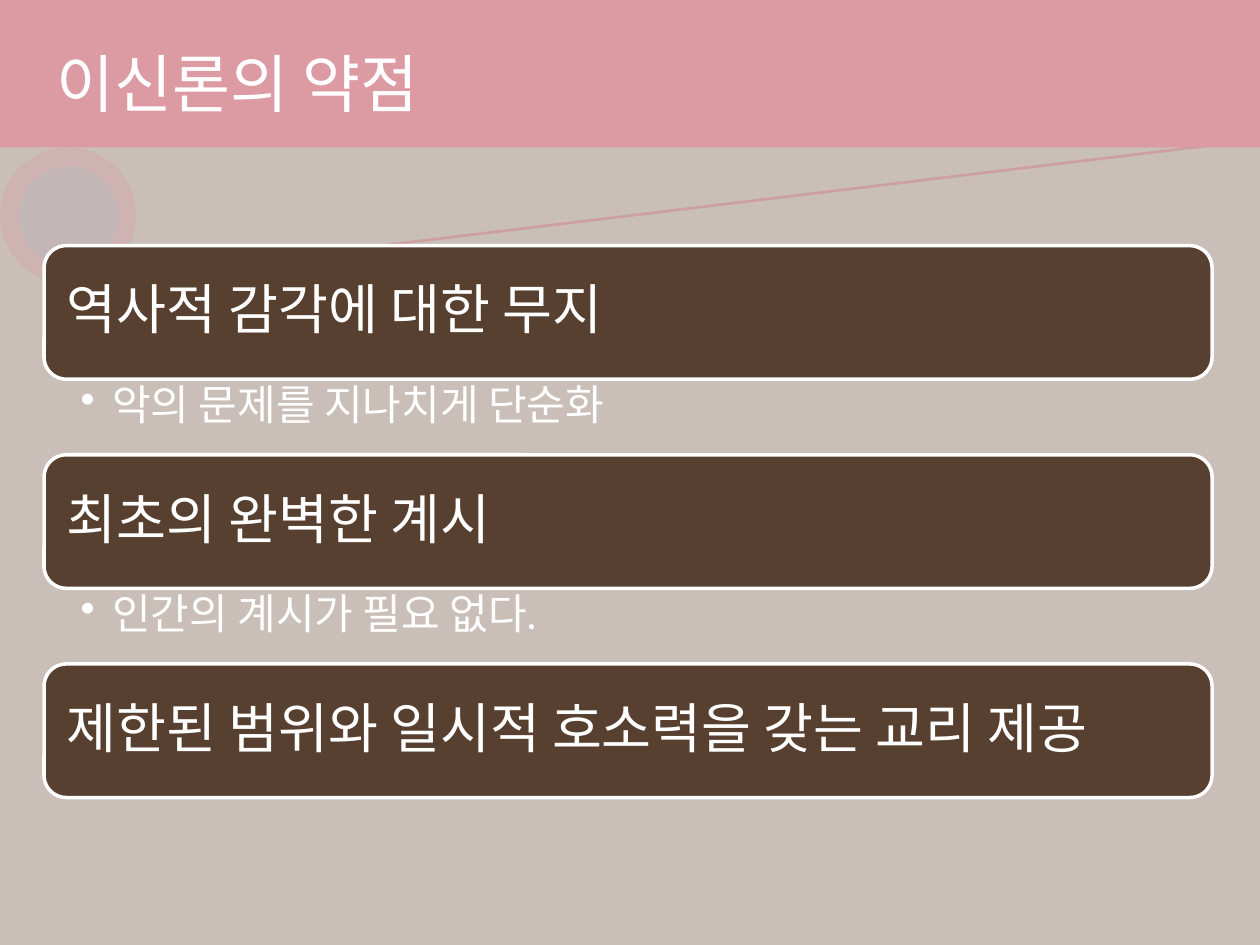
import pptx
import pptx.util
import pptx.dml.color
import pptx.enum.shapes
import pptx.enum.text
import pptx.oxml.ns
from lxml import etree

Inches, Pt = pptx.util.Inches, pptx.util.Pt
Shape = pptx.enum.shapes.MSO_SHAPE
Anchor = pptx.enum.text.MSO_ANCHOR
Align = pptx.enum.text.PP_ALIGN
qn = pptx.oxml.ns.qn

TITLE = "이신론의 약점"
POINTS = [
    ("역사적 감각에 대한 무지", "악의 문제를 지나치게 단순화"),
    ("최초의 완벽한 계시", "인간의 계시가 필요 없다."),
    ("제한된 범위와 일시적 호소력을 갖는 교리 제공", None),
]
RINGS = [(0, 1.17, 1.08, "E88B9D"), (0.15, 1.32, 0.79, "94C7CC")]
WHITE, BROWN, PINK, BEIGE = "FFFFFF", "57402F", "DC9BA3", "C9BEB8"

LEFT, TOP, WIDTH = 0.35, 1.95, 9.27
BAR, NOTE = 1.06, 0.6
BAND = 1.17

HEAD = {"size": Pt(31), "name": "Lato"}
SUB = {"size": Pt(24), "name": "Lato"}
TOPIC = {"size": Pt(36), "name": "Arial"}


def paint(form, code, alpha=None):
    """Give a fill a solid colour, with opacity in percent if asked."""
    form.solid()
    form.fore_color.rgb = pptx.dml.color.RGBColor.from_string(code)
    if alpha is not None:
        for node in form._xPr.iter(qn("a:srgbClr")):
            etree.SubElement(node, qn("a:alpha"), val=str(alpha * 1000))


def place(shape, *box):
    for key, val in zip(("left", "top", "width", "height"), box):
        setattr(shape, key, Inches(val))


def draw(slide, kind, box, code, alpha=None):
    shape = slide.shapes.add_shape(kind, *map(Inches, box))
    shape.shadow.inherit = False
    shape.line.fill.background()
    paint(shape.fill, code, alpha)
    return shape


def write(shape, text, font, anchor, pads, after=0, space=1.0):
    frame = shape.text_frame
    frame.word_wrap = True
    frame.auto_size = pptx.enum.text.MSO_AUTO_SIZE.NONE
    frame.vertical_anchor = anchor
    for side, pad in zip(("left", "top", "right", "bottom"), pads):
        setattr(frame, "margin_" + side, Inches(pad))
    para = frame.paragraphs[0]
    para.alignment = Align.LEFT
    para.line_spacing = space
    para.space_after = Pt(after)
    run = para.add_run()
    run.text = text
    for key, val in font.items():
        setattr(run.font, key, val)
    paint(run.font.fill, WHITE)
    return para


def bullet(para):
    para.level = 1
    props = para._p.get_or_add_pPr()
    props.set("marL", str(Inches(0.25)))
    props.set("indent", str(Inches(-0.25)))
    etree.SubElement(props, qn("a:buChar"), char="•")


def backdrop(slide):
    paint(slide.background.fill, BEIGE)
    for left, top, size, code in RINGS:
        draw(slide, Shape.OVAL, (left, top, size, size), code, 22)
    ray = slide.shapes.add_connector(
        pptx.enum.shapes.MSO_CONNECTOR.STRAIGHT,
        *map(Inches, (0.54, 2.25, 9.56, 1.16)))
    ray.line.width = Pt(1.5)
    paint(ray.line.fill, "D83D5C", 23)
    etree.SubElement(ray._element.spPr, qn("a:effectLst"))
    draw(slide, Shape.RECTANGLE, (0, 0, 10, BAND), PINK)


def main():
    deck = pptx.Presentation()
    deck.slide_width, deck.slide_height = Inches(10), Inches(7.5)
    slide = deck.slides.add_slide(deck.slide_layouts[5])
    backdrop(slide)

    title = slide.shapes.title
    slide.shapes._spTree.append(title._element)  # in front of the band
    place(title, LEFT, 0.14, WIDTH, BAND - 0.14)
    write(title, TITLE, TOPIC, Anchor.MIDDLE, (0.1, 0.05, 0.1, 0.05))

    for row, (head, sub) in enumerate(POINTS):
        top = TOP + row * (BAR + NOTE)
        bar = draw(slide, Shape.ROUNDED_RECTANGLE, (LEFT, top, WIDTH, BAR), BROWN)
        bar.line.width = Pt(2)
        paint(bar.line.fill, WHITE)
        write(bar, head, HEAD, Anchor.MIDDLE, (0.13, 0.13, 0.13, 0.13), 11, 0.9)
        if sub:
            box = (LEFT, top + BAR, WIDTH, NOTE)
            note = slide.shapes.add_textbox(*map(Inches, box))
            bullet(write(note, sub, SUB, Anchor.TOP, (0.29, 0.04, 0.24, 0.04), 5, 0.9))

    deck.save("out.pptx")


if __name__ == "__main__":
    main()
